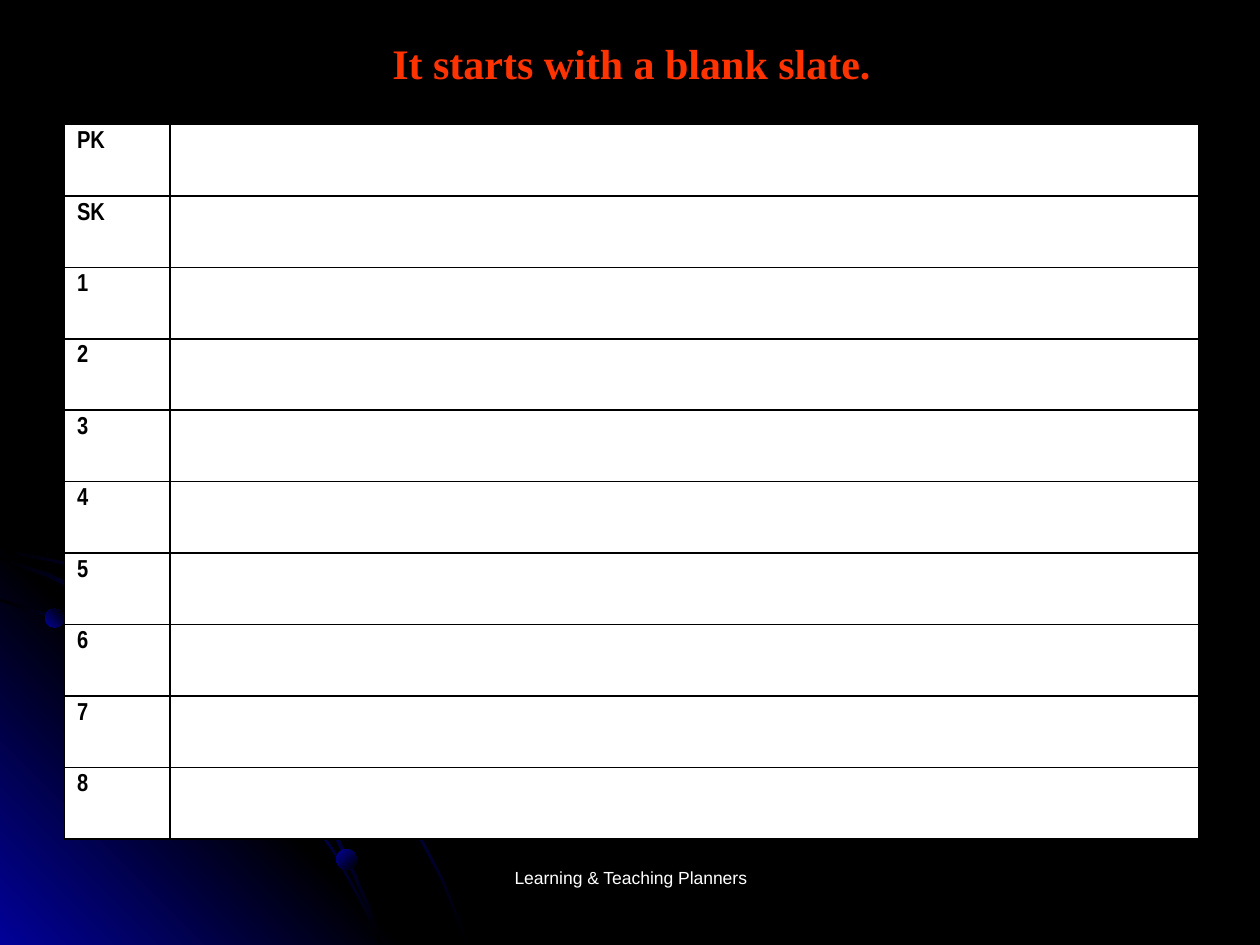
from pptx import Presentation
from pptx import util as u
from pptx.dml import color
from pptx.enum import shapes, text
from pptx.oxml import parse_xml
from pptx.oxml import ns

BLACK, BLUE, WHITE, RED = "000000", "010199", "FFFFFF", "FF3300"
GLOW = [(0, BLACK), (50, BLUE), (100, BLACK)]
CORNER = [(0, BLUE), (50, BLACK), (100, BLUE)]
BALL = [(0, BLUE), (100, BLACK)]
POINT = u.Cm(0.0254)

OUTER_ARC = [
    (57, 20), (28, 14), (0, 8), (0, 11), (28, 16), (56, 22), (97, 34), (135, 51),
    (173, 72), (208, 96), (241, 122), (271, 152), (298, 185), (323, 222),
    (337, 246), (350, 271), (360, 296), (370, 322), (372, 322), (362, 296),
    (352, 271), (339, 246), (325, 221), (300, 184), (272, 151), (242, 121),
    (209, 94), (174, 70), (136, 50), (98, 32)]
TRIANGLE = [(322, 323), (0, 323), (0, 0)]
INNER_ARC = [
    (285, 287), (294, 305), (301, 322), (303, 322), (296, 303), (286, 285),
    (266, 249), (242, 213), (215, 179), (184, 149), (152, 122), (117, 99),
    (79, 78), (41, 61), (0, 48), (0, 50), (39, 63), (77, 80), (115, 101),
    (150, 124), (183, 151), (213, 181), (240, 214), (265, 250)]
MIDDLE_ARC = [
    (0, 15), (0, 17), (36, 30), (74, 48), (109, 67), (142, 91), (173, 117),
    (202, 148), (227, 178), (252, 214), (267, 240), (280, 267), (292, 295),
    (301, 322), (303, 322), (294, 293), (282, 266), (269, 238), (254, 212),
    (229, 176), (204, 146), (175, 116), (144, 89), (111, 66), (76, 46), (39, 28)]
OUTLINES = [(OUTER_ARC, GLOW, 45), (TRIANGLE, CORNER, 315),
            (INNER_ARC, GLOW, 45), (MIDDLE_ARC, GLOW, 45)]
BALLS = [(0.91, 1.42, 0.38, 315), (6.78, 6.27, 0.41, 45), (3.48, 1.17, 0.53, 315)]
GRADES = ["PK", "SK"] + [str(n) for n in range(1, 9)]


def rgb(value):
    """Turn a hex string into a colour."""
    return color.RGBColor.from_string(value)


def set_font(p, name, size, value, bold=False):
    """Set the font of a whole paragraph."""
    p.font.name, p.font.size, p.font.bold = name, u.Pt(size), bold
    p.font.color.rgb = rgb(value)


def paint(sp, stops, angle):
    """Give a shape a linear gradient, no line and no shadow."""
    marks = "".join(f'<a:gs pos="{pos * 1000}"><a:srgbClr val="{value}"/></a:gs>'
                    for pos, value in stops)
    sp._element.spPr.insert(2, parse_xml(
        f'<a:gradFill {ns.nsdecls("a")} rotWithShape="1"><a:gsLst>{marks}</a:gsLst>'
        f'<a:lin ang="{angle * 60000}" scaled="1"/></a:gradFill>'))
    sp.line.fill.background()
    sp.shadow.inherit = False


def add_corner(s, left, top):
    """Draw the glowing corner with its arcs and balls."""
    for points, stops, angle in OUTLINES:
        builder = s.shapes.build_freeform(*points[0], scale=POINT)
        builder.add_line_segments(points[1:], close=True)
        paint(builder.convert_to_shape(u.Cm(left), u.Cm(top)), stops, angle)
    for x, y, size, angle in BALLS:
        sp = s.shapes.add_shape(shapes.MSO_SHAPE.OVAL, u.Cm(left + x), u.Cm(top + y),
                                u.Cm(size), u.Cm(size))
        paint(sp, BALL, angle)


def add_text(s, left, top, width, height, words, anchor, **font):
    """Place one centred line of text."""
    sp = s.shapes.add_textbox(u.Cm(left), u.Cm(top), u.Cm(width), u.Cm(height))
    tf = sp.text_frame
    tf.word_wrap, tf.vertical_anchor = True, anchor
    p = tf.paragraphs[0]
    p.text, p.alignment = words, text.PP_ALIGN.CENTER
    set_font(p, **font)


def style_cell(cell):
    """Give a cell a white fill and thin black borders."""
    tc_pr = cell._tc.get_or_add_tcPr()
    for side in "LRTB":
        tc_pr.append(parse_xml(
            f'<a:ln{side} {ns.nsdecls("a")} w="{u.Pt(1)}"><a:solidFill>'
            f'<a:srgbClr val="{BLACK}"/></a:solidFill></a:ln{side}>'))
    cell.fill.solid()
    cell.fill.fore_color.rgb = rgb(WHITE)


def add_grades(s, left, top, width, height):
    """Place the table with one empty row for each grade."""
    table = s.shapes.add_table(len(GRADES), 2, u.Cm(left), u.Cm(top),
                               u.Cm(width), u.Cm(height)).table
    label_width = 2.13
    table.columns[0].width = u.Cm(label_width)
    table.columns[1].width = u.Cm(width - label_width)
    for row, grade in zip(table.rows, GRADES):
        for cell in row.cells:
            style_cell(cell)
        p = row.cells[0].text_frame.paragraphs[0]
        p.text = grade
        p_pr = p._p.get_or_add_pPr()
        p_pr.set("marL", str(u.Cm(0.97)))
        p_pr.set("indent", str(-u.Cm(0.97)))
        set_font(p, "Arial Narrow", 14, BLACK, True)


def main():
    """Build and save the slide."""
    prs = Presentation()
    prs.slide_width, prs.slide_height = u.Cm(25.4), u.Cm(19.05)
    s = prs.slides.add_slide(prs.slide_layouts[6])
    s.background.fill.solid()
    s.background.fill.fore_color.rgb = rgb(BLACK)
    add_corner(s, 0, 10.85)
    add_text(s, 8.69, 17.35, 8.05, 1.27, "Learning & Teaching Planners",
             text.MSO_ANCHOR.TOP, name="Arial", size=10, value=WHITE)
    add_text(s, 1.3, 0, 22.86, 2.51, "It starts with a blank slate.",
             text.MSO_ANCHOR.MIDDLE, name="Times New Roman", size=24, value=RED, bold=True)
    add_grades(s, 1.3, 2.51, 22.86, 14.4)
    prs.save("out.pptx")


if __name__ == "__main__":
    main()
